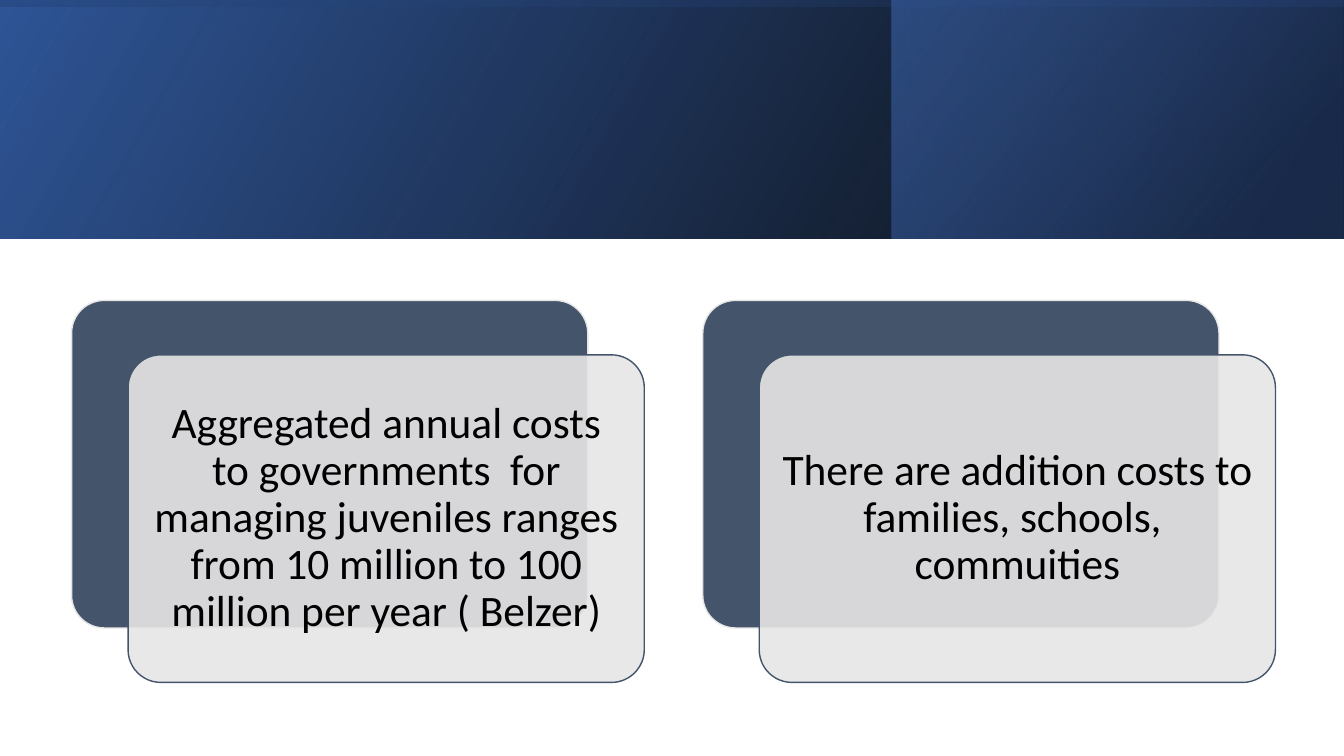
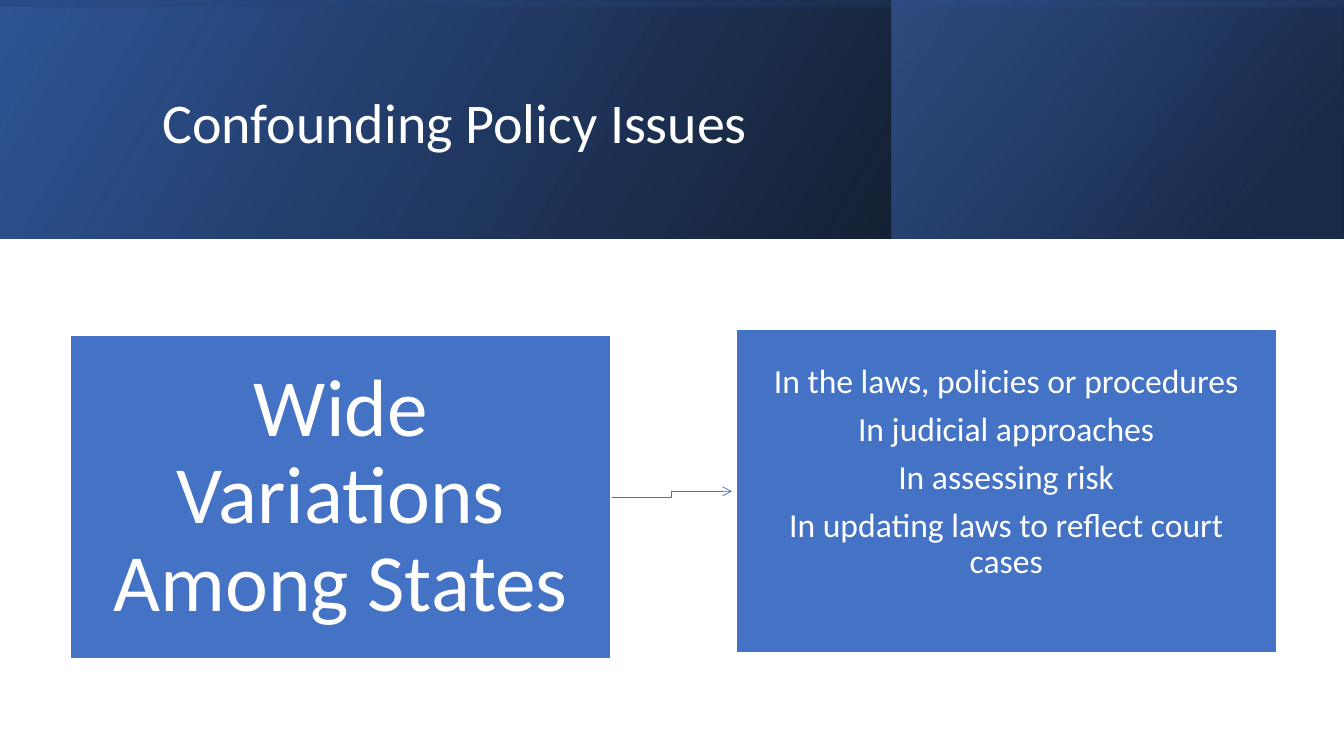
"""Build two slides on juvenile justice costs and policy issues."""
from lxml import etree
from pptx import Presentation
from pptx.dml.color import RGBColor
from pptx.enum.shapes import MSO_CONNECTOR, MSO_SHAPE
from pptx.enum.text import MSO_ANCHOR, PP_ALIGN
from pptx.oxml.ns import qn
from pptx.util import Inches, Pt

FONT = "Calibri"
WHITE = RGBColor(0xFF, 0xFF, 0xFF)
BLACK = RGBColor(0x00, 0x00, 0x00)
BLUE = RGBColor(0x44, 0x72, 0xC4)
DEEP_BLUE = RGBColor(0x2F, 0x55, 0x97)
NAVY = RGBColor(0x20, 0x38, 0x64)
SLATE = RGBColor(0x44, 0x54, 0x6A)
PALE = RGBColor(0xE7, 0xE6, 0xE6)

BAND_H = 2.37
BANDS = [
    ((0, 0, 13.33, BAND_H), 0, 330, [(0, BLACK, 96), (100, DEEP_BLUE, 100)]),
    ((8.84, 0, 4.48, BAND_H), 0, 320, [(19, NAVY, 68), (100, BLUE, 48)]),
    ((5.48, -5.48, BAND_H, 13.33), 270, 350,
     [(23, DEEP_BLUE, 16), (99, BLACK, 45)]),
]

COSTS = [
    "Aggregated annual costs to governments  for managing juveniles ranges "
    "from 10 million to 100 million per year ( Belzer)",
    "There are addition costs to families, schools,  commuities",
]
CARD_LEFT, CARD_TOP, CARD_W, CARD_H = 0.71, 2.98, 5.12, 3.25
CARD_STEP, CARD_DX, CARD_DY = 6.26, 0.56, 0.54

TITLE = "Confounding Policy Issues"
BOX_W, BOX_H = 5.36, 3.21
BOXES = [
    (0.7, 3.33, 58, 0.28, ["Wide Variations Among States"]),
    (7.3, 3.27, 24, 0.66, [
        "In the laws, policies or procedures",
        "In judicial approaches",
        "In assessing risk",
        "In updating laws to reflect court cases",
    ]),
]
ARROW_GAP = 0.04


def set_alpha(color, percent):
    etree.SubElement(color, qn("a:alpha")).set("val", str(percent * 1000))


def add_box(s, preset, box, fill=None, line=None):
    sp = s.shapes.add_shape(preset, *map(Inches, box))
    sp.shadow.inherit = False
    if fill is not None:
        sp.fill.solid()
        sp.fill.fore_color.rgb = fill
    if line is None:
        sp.line.fill.background()
    else:
        sp.line.color.rgb = line
        sp.line.width = Pt(1)
    return sp


def add_bands(s):
    for box, turn, angle, stops in BANDS:
        sp = add_box(s, MSO_SHAPE.RECTANGLE, box)
        sp.rotation = turn
        pr = sp._element.spPr
        pr.find(qn("a:xfrm")).set("flipH", "1")
        sp.fill.gradient()
        grad = pr.find(qn("a:gradFill"))
        grad.find(qn("a:lin")).set("ang", str(angle * 60000))
        grad.find(qn("a:lin")).set("scaled", "0")
        for stop, (pos, color, alpha) in zip(sp.fill.gradient_stops, stops):
            stop.position = pos / 100
            stop.color.rgb = color
        for gs, (_, _, alpha) in zip(grad.iter(qn("a:gs")), stops):
            set_alpha(gs[0], alpha)


def write(sp, lines, size, color, insets=None, align=PP_ALIGN.CENTER):
    tf = sp.text_frame
    tf.word_wrap = True
    tf.vertical_anchor = MSO_ANCHOR.MIDDLE
    if insets:
        side, top, bottom = map(Inches, insets)
        tf.margin_left = tf.margin_right = side
        tf.margin_top, tf.margin_bottom = top, bottom
    for i, text in enumerate(lines):
        p = tf.add_paragraph() if i else tf.paragraphs[0]
        p.alignment = align
        p.line_spacing = 0.9
        p.space_before = Pt(0)
        if i < len(lines) - 1:
            p.space_after = Pt(round(size * 0.35, 1))
        r = p.add_run()
        r.text = text
        r.font.name = FONT
        r.font.size = Pt(size)
        r.font.color.rgb = color


def build_costs(prs):
    s = prs.slides.add_slide(prs.slide_layouts[6])
    add_bands(s)
    for i, text in enumerate(COSTS):
        left = CARD_LEFT + i * CARD_STEP
        back = add_box(s, MSO_SHAPE.ROUNDED_RECTANGLE,
                       (left, CARD_TOP, CARD_W, CARD_H), SLATE, PALE)
        front = add_box(s, MSO_SHAPE.ROUNDED_RECTANGLE,
                        (left + CARD_DX, CARD_TOP + CARD_DY, CARD_W, CARD_H),
                        PALE, SLATE)
        for card in (back, front):
            card.adjustments[0] = 0.1
        set_alpha(front._element.spPr.find(qn("a:solidFill"))[0], 90)
        write(front, [text], 31, BLACK, (0.13, 0.13, 0.13))


def add_arrow(s, x1, y1, x2, y2):
    c = s.shapes.add_connector(MSO_CONNECTOR.ELBOW,
                               *map(Inches, (x1, y1, x2, y2)))
    c.line.color.rgb = BLUE
    c.line.width = Pt(0.5)
    ln = c.line._get_or_add_ln()
    etree.SubElement(ln, qn("a:tailEnd")).set("type", "arrow")
    etree.SubElement(c._element.spPr, qn("a:effectLst"))


def build_issues(prs):
    s = prs.slides.add_slide(prs.slide_layouts[5])
    add_bands(s)
    title = s.shapes.title
    title.left, title.top = Inches(1.51), Inches(0.38)
    title.width, title.height = Inches(10.63), Inches(1.72)
    write(title, [TITLE], 40, WHITE, align=PP_ALIGN.LEFT)
    s.shapes._spTree.append(title._element)
    (x1, y1, *_), (x2, y2, *_) = BOXES
    add_arrow(s, x1 + BOX_W, y1 + BOX_H / 2, x2 - ARROW_GAP, y2 + BOX_H / 2)
    for left, top, size, bottom, lines in BOXES:
        sp = add_box(s, MSO_SHAPE.RECTANGLE, (left, top, BOX_W, BOX_H),
                     BLUE, WHITE)
        write(sp, lines, size, WHITE, (0.26, 0.28, bottom))


def main():
    prs = Presentation()
    prs.slide_width, prs.slide_height = Inches(13.33), Inches(7.5)
    build_costs(prs)
    build_issues(prs)
    prs.save("out.pptx")


if __name__ == "__main__":
    main()
